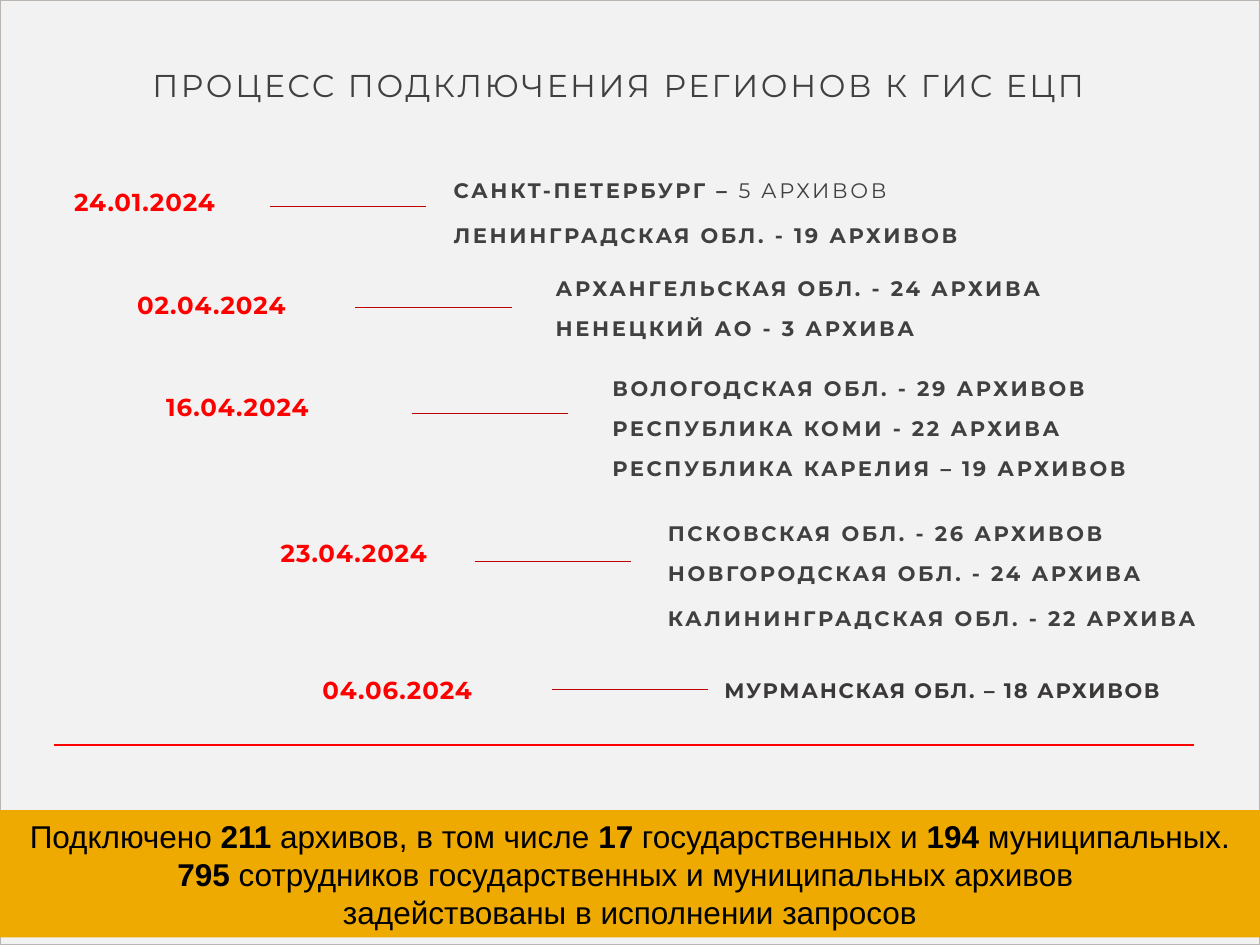
from pptx import Presentation
from pptx.dml.color import RGBColor
from pptx.enum.shapes import MSO_CONNECTOR as Link, MSO_SHAPE as Shape
from pptx.enum.text import MSO_ANCHOR as Anchor, MSO_AUTO_SIZE as Fit, PP_ALIGN as Align
from pptx.oxml.ns import qn
from pptx.util import Inches, Pt
from lxml.etree import SubElement

HUES = {"page": "F2F2F2", "edge": "BAB5B1", "text": "404040", "dark": "3B3838",
        "date": "FF0000", "link": "C00000", "bar": "EEAA00", "ink": "000000"}
COLS, ROWS = 100, 75


class Page:
    """One slide on a grid of 100 columns by 75 rows, with its style."""
    font = "Montserrat"

    def __init__(self, deck):
        self.deck = deck
        self.slide = deck.slides.add_slide(deck.slide_layouts[4])
        self.holders = list(self.slide.placeholders)
        self.shapes = self.slide.shapes

    def hue(self, name):
        return RGBColor.from_string(HUES[name])

    def x(self, col):
        return round(self.deck.slide_width * col / COLS)

    def y(self, row):
        return round(self.deck.slide_height * row / ROWS)

    def area(self, col, row, wide, high):
        return self.x(col), self.y(row), self.x(wide), self.y(high)

    def fill(self, para, parts, size, hue, bold=False, track=0, font=None):
        """Fill a paragraph; parts alternate between the given weight and its opposite."""
        for i, part in enumerate(parts):
            run = para.add_run()
            run.text = part
            if len(parts) > 1:
                run.font.bold = bold ^ (i % 2 == 1)
            if track:
                run._r.get_or_add_rPr().set("spc", str(round(track * 100)))
        face = para.font
        face.name, face.size, face.color.rgb = font or self.font, Pt(size), self.hue(hue)
        if len(parts) == 1:
            face.bold = bold

    def frame(self, shape, anchor=Anchor.MIDDLE):
        text = shape.text_frame
        text.word_wrap, text.auto_size = True, Fit.NONE
        text.vertical_anchor = anchor
        return text

    def hold(self, box):
        """Take the next placeholder and move it."""
        shape = self.holders.pop(0)
        shape.left, shape.top, shape.width, shape.height = self.area(*box)
        return self.frame(shape)

    def title(self, text, box):
        para = self.hold(box).paragraphs[0]
        para.alignment, para.line_spacing = Align.LEFT, 0.9
        self.fill(para, [text], 18, "text", track=1.5)

    def list(self, items, box):
        """Show (gap before, parts) items as a list without bullets."""
        text = self.hold(box)
        for i, (gap, *parts) in enumerate(items):
            para = text.add_paragraph() if i else text.paragraphs[0]
            para.line_spacing, para.space_before = 0.9, Pt(gap)
            props = para._p.get_or_add_pPr()
            props.set("marL", "0")
            props.set("indent", "0")
            SubElement(props, qn("a:buNone"))
            self.fill(para, parts, 12, "text", True, 1.5)

    def label(self, text, box, size, hue, track):
        shape = self.shapes.add_textbox(*self.area(*box))
        para = self.frame(shape).paragraphs[0]
        self.fill(para, [text], size, hue, True, track)

    def rect(self, box, fill, edge=None):
        shape = self.shapes.add_shape(Shape.RECTANGLE, *self.area(*box))
        shape.shadow.inherit = False
        shape.fill.solid()
        shape.fill.fore_color.rgb = self.hue(fill)
        if edge:
            shape.line.color.rgb, shape.line.width = self.hue(edge), Pt(1)
        else:
            shape.line.fill.background()
        return shape

    def back(self):
        shape = self.rect((0, 0, COLS, ROWS), "page", "edge")
        self.shapes._spTree.insert(2, shape._element)

    def bar(self, lines, box):
        text = self.frame(self.rect(box, "bar"))
        for i, (bold, *parts) in enumerate(lines):
            para = text.add_paragraph() if i else text.paragraphs[0]
            para.alignment = Align.CENTER
            self.fill(para, parts, 18, "ink", bold, font="Arial")

    def rule(self, col, row, wide, hue, width):
        line = self.shapes.add_connector(
            Link.STRAIGHT, self.x(col), self.y(row), self.x(col + wide), self.y(row))
        line.line.color.rgb, line.line.width = self.hue(hue), Pt(width)
        SubElement(line._element.spPr, qn("a:effectLst"))


# date, its column and row, link column and row, list box, list items
STEPS = [
    ("24.01.2024", 4.9, 14.3, 21.4, 16.4, (35, 14.2, 48, 5.6),
     [(10, "САНКТ-ПЕТЕРБУРГ – ", "5 АРХИВОВ"),
      (13, "ЛЕНИНГРАДСКАЯ ОБЛ. - 19 АРХИВОВ")]),
    ("02.04.2024", 9.9, 22.5, 28.2, 24.4, (43.1, 21.8, 48, 5.6),
     [(10, "АРХАНГЕЛЬСКАЯ ОБЛ. - 24 АРХИВА"), (10, "НЕНЕЦКИЙ АО - 3 АРХИВА")]),
    ("16.04.2024", 12.2, 30.6, 32.7, 32.8, (47.6, 30.4, 48, 7.4),
     [(10, "ВОЛОГОДСКАЯ ОБЛ. - 29 АРХИВОВ"), (10, "РЕСПУБЛИКА КОМИ - 22 АРХИВА"),
      (10, "РЕСПУБЛИКА КАРЕЛИЯ – 19 АРХИВОВ")]),
    ("23.04.2024", 21.3, 42.2, 37.7, 44.6, (52, 43, 47.6, 5.6),
     [(10, "ПСКОВСКАЯ ОБЛ. - 26 АРХИВОВ"), (10, "НОВГОРОДСКАЯ ОБЛ. - 24 АРХИВА"),
      (13, "КАЛИНИНГРАДСКАЯ ОБЛ. - 22 АРХИВА")]),
    ("04.06.2024", 24.6, 53, 43.8, 54.7, None, []),
]
TOTAL = [
    (False, "Подключено ", "211", " архивов, в том числе ", "17",
     " государственных и ", "194", " муниципальных."),
    (True, "795 ", "сотрудников государственных и муниципальных архивов "),
    (False, "задействованы в исполнении запросов"),
]


def main():
    deck = Presentation()
    deck.slide_width, deck.slide_height = Inches(10), Inches(7.5)
    page = Page(deck)
    page.back()
    page.title("ПРОЦЕСС ПОДКЛЮЧЕНИЯ РЕГИОНОВ К ГИС ЕЦП", (11.1, 1.3, 83.7, 11.2))
    for date, col, row, left, mid, box, items in STEPS:
        page.label(date, (col, row, 16, 3.4), 14, "date", 0.5)
        page.rule(left, mid, 12.4, "link", 0.5)
        if items:
            page.list(items, box)
    page.label("МУРМАНСКАЯ ОБЛ. – 18 АРХИВОВ", (56.5, 53.1, 43, 3.4), 12, "dark", 1)
    page.bar(TOTAL, (0, 64.3, COLS, 10.1))
    page.rule(4.3, 59.1, 90.5, "date", 1.25)
    deck.save("out.pptx")


if __name__ == "__main__":
    main()
